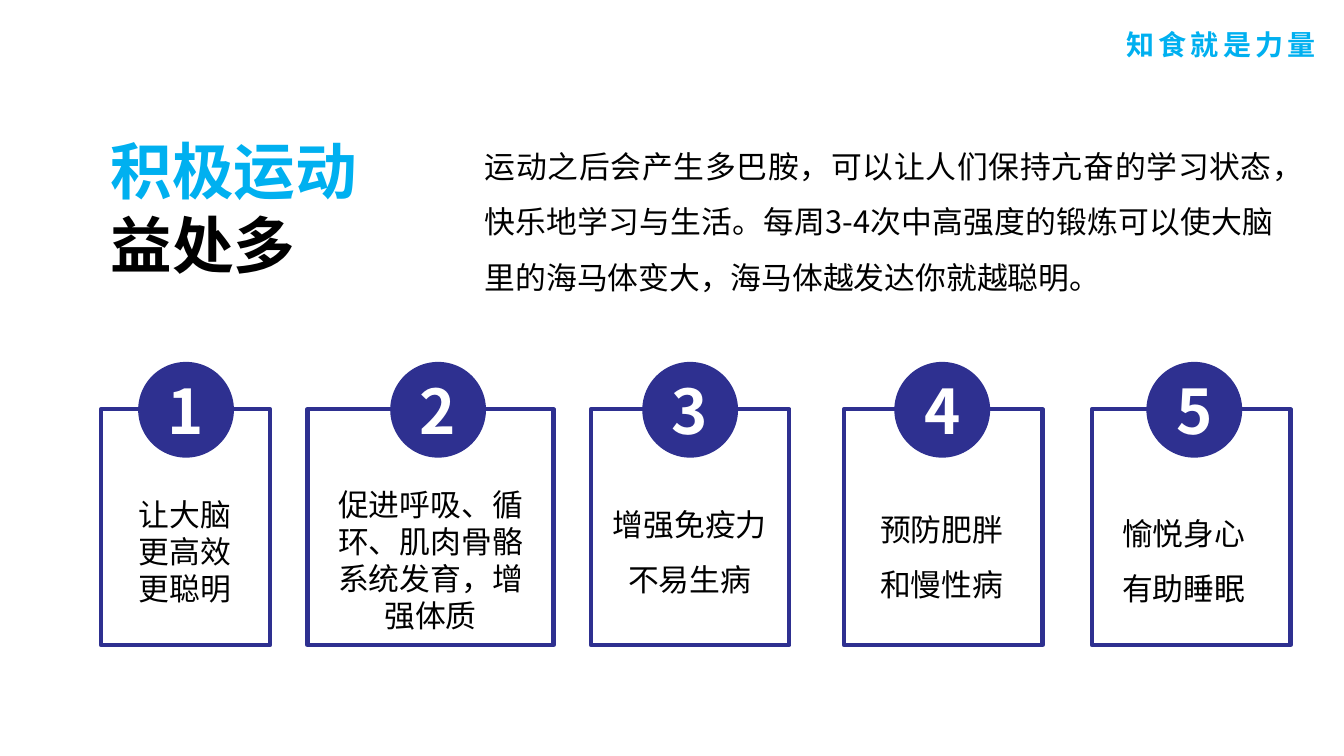
from lxml import etree
from pptx import Presentation
from pptx.dml.color import RGBColor
from pptx.enum.shapes import MSO_SHAPE
from pptx.enum.text import MSO_ANCHOR, MSO_AUTO_SIZE, PP_ALIGN
from pptx.oxml.ns import qn
from pptx.util import Inches, Pt

RECT, OVAL = MSO_SHAPE.RECTANGLE, MSO_SHAPE.OVAL
LEFT, MID, JUST = PP_ALIGN.LEFT, PP_ALIGN.CENTER, PP_ALIGN.JUSTIFY
GROW, CENTER = MSO_AUTO_SIZE.SHAPE_TO_FIT_TEXT, MSO_ANCHOR.MIDDLE

FONT = "Noto Sans CJK SC"
NAVY, SKY, BLACK, WHITE = "2E3090", "00B0F0", "000000", "FFFFFF"


def color(code):
    return RGBColor.from_string(code)


def write(frame, lines, size=22, fill=BLACK, bold=False, align=MID,
          space=None, track=None, pad=(0, 0)):
    """Fill a frame; each line is a string or a (string, colour) pair."""
    frame.word_wrap = True
    frame.margin_left = frame.margin_right = Inches(pad[0])
    frame.margin_top = frame.margin_bottom = Inches(pad[1])
    for i, line in enumerate(lines):
        words, tint = line if isinstance(line, tuple) else (line, fill)
        para = frame.paragraphs[0] if i == 0 else frame.add_paragraph()
        para.alignment = align
        if space:
            para.line_spacing = space
        run = para.add_run()
        run.text = words
        font = run.font
        font.size, font.bold, font.name = Pt(size), bold, FONT
        font.color.rgb = color(tint)
        props = run._r.get_or_add_rPr()
        etree.SubElement(props, qn("a:ea")).set("typeface", FONT)
        if track:
            props.set("spc", str(track * 100))


class Deck:
    def __init__(self):
        self.prs = Presentation()
        self.prs.slide_width = Inches(13.33)
        self.prs.slide_height = Inches(7.5)
        self.slide = self.prs.slides.add_slide(self.prs.slide_layouts[6])

    def text(self, area, lines, **style):
        box = self.slide.shapes.add_textbox(*map(Inches, area))
        write(box.text_frame, lines, **style)
        box.text_frame.auto_size = GROW

    def shape(self, kind, area, fill, line=None):
        item = self.slide.shapes.add_shape(kind, *map(Inches, area))
        item.shadow.inherit = False
        item.fill.solid()
        item.fill.fore_color.rgb = color(fill)
        if line:
            item.line.color.rgb = color(line)
            item.line.width = Pt(3)
        else:
            item.line.fill.background()
        return item

    def card(self, left, width):
        self.shape(RECT, (left, 4.06, width, 2.34), WHITE, NAVY)

    def badge(self, num):
        disc = self.shape(OVAL, (1.37 + 2.5 * (num - 1), 3.59, 0.95, 0.95), NAVY)
        write(disc.text_frame, [str(num)], size=44, fill=WHITE, bold=True)
        disc.text_frame.vertical_anchor = CENTER


# Card left and width, text area, lines, text style
CARDS = [
    (1, 1.68, (0.54, 4.92, 2.59, 1.11), ["让大脑", "更高效", "更聪明"], {}),
    (3.05, 2.44, (3.28, 4.82, 1.98, 1.48),
     ["促进呼吸、循环、肌肉骨骼系统发育，增强体质"], {}),
    (5.86, 1.97, (5.85, 4.83, 1.98, 1.06), ["增强免疫力", "不易生病"],
     {"space": 1.5}),
    (8.37, 1.97, (8.56, 4.83, 1.56, 1.16), ["预防肥胖和慢性病"],
     {"space": 1.5, "pad": (0.1, 0.05)}),
    (10.83, 1.97, (11.13, 4.92, 1.37, 1.06), ["愉悦身心", "有助睡眠"],
     {"space": 1.5, "align": JUST}),
]


def main():
    deck = Deck()

    # Header
    deck.text((10.79, 0.22, 2.64, 0.44), ["知食就是力量"], size=20, fill=SKY,
              bold=True, track=3, pad=(0.1, 0.05))

    # Title and introduction
    deck.text((1, 1.27, 4.8, 1.58), [("积极运动", SKY), "益处多"], size=44,
              bold=True, align=LEFT, pad=(0.1, 0.05))
    deck.text((4.81, 1.28, 7.82, 1.62),
              ["运动之后会产生多巴胺，可以让人们保持亢奋的学习状态，"
               "快乐地学习与生活。每周3-4次中高强度的锻炼可以使大"
               "脑里的海马体变大，海马体越发达你就越聪明。"],
              align=JUST, space=1.5)

    # Numbered benefits
    for num, (left, width, area, lines, style) in enumerate(CARDS, 1):
        deck.card(left, width)
        deck.text(area, lines, **style)
        deck.badge(num)

    deck.prs.save("out.pptx")


if __name__ == "__main__":
    main()
